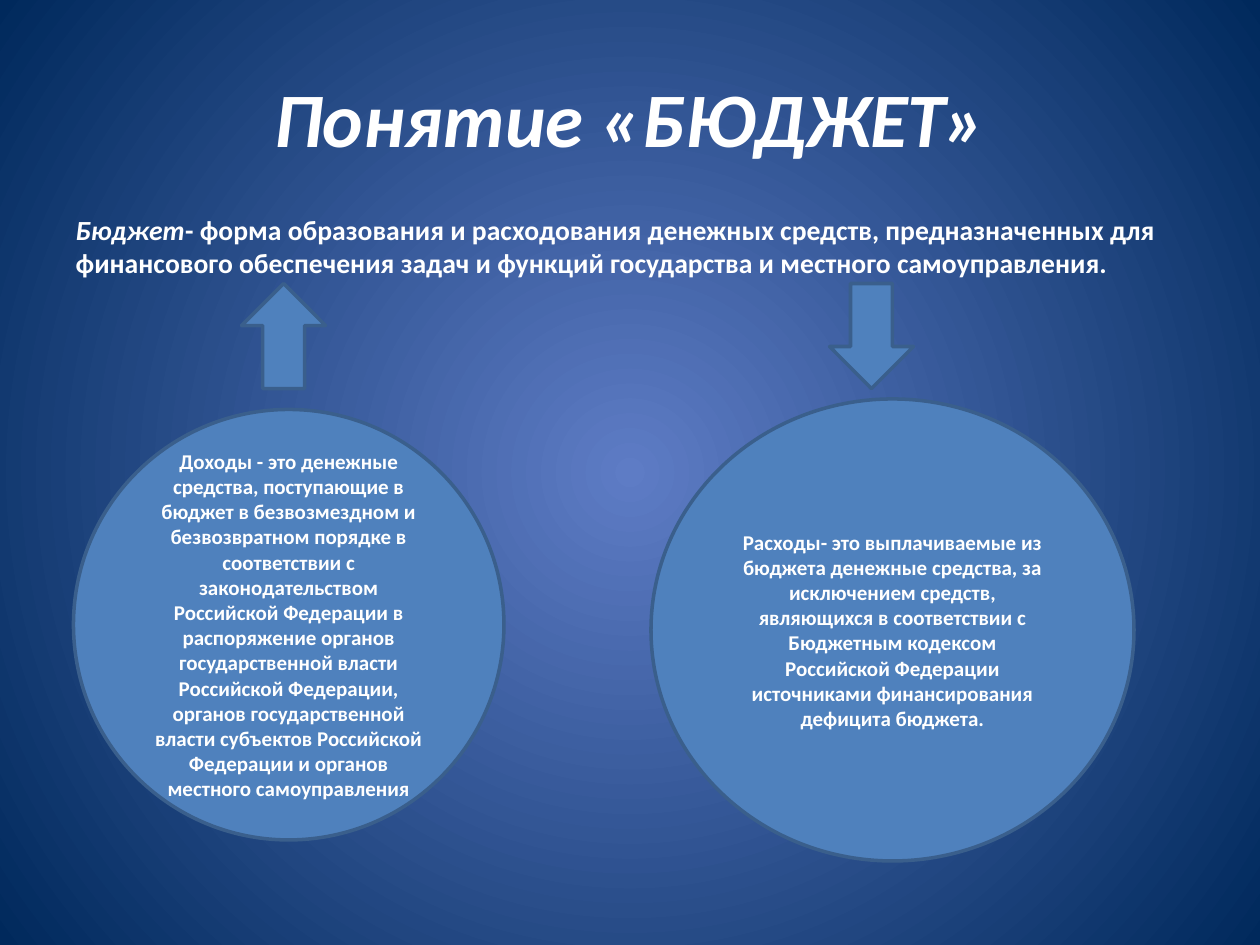
from lxml.etree import SubElement
from pptx import Presentation
from pptx.dml.color import RGBColor
from pptx.enum.shapes import MSO_SHAPE
from pptx.enum.text import MSO_ANCHOR, MSO_AUTO_SIZE, PP_ALIGN
from pptx.oxml.ns import qn
from pptx.util import Pt

WHITE, BLUE, EDGE = "FFFFFF", "4F81BD", "3A5F8C"
INCOME = (
    "Доходы - это денежные средства, поступающие в бюджет в безвозмездном и "
    "безвозвратном порядке в соответствии с законодательством Российской Федерации "
    "в распоряжение органов государственной власти Российской Федерации, органов "
    "государственной власти субъектов Российской Федерации и органов местного "
    "самоуправления"
)
EXPENSES = (
    "Расходы- это выплачиваемые из бюджета денежные средства, за исключением "
    "средств, являющихся в соответствии с Бюджетным кодексом Российской Федерации "
    "источниками финансирования дефицита бюджета."
)
DEFINITION = (
    "- форма образования и расходования денежных средств, предназначенных для "
    "финансового обеспечения задач и функций государства и местного самоуправления."
)


def color(value):
    """Turn a hex string into a colour."""
    return RGBColor.from_string(value)


def add_text(p, text, size, italic=False, align=PP_ALIGN.CENTER):
    """Append a bold white run to a paragraph."""
    p.alignment = align
    r = p.add_run()
    r.text = text
    r.font.name = "Calibri"
    r.font.size = Pt(size)
    r.font.bold = True
    r.font.italic = italic
    r.font.color.rgb = color(WHITE)


def place(sp, box):
    """Move a shape to a left, top, width, height box in points."""
    sp.left, sp.top, sp.width, sp.height = map(Pt, box)


def fill_background(s, inner, outer):
    """Fill the slide with a circular gradient from its centre."""
    fill = s.background.fill
    fill.gradient()
    for stop, value, position in zip(fill.gradient_stops, (inner, outer), (0, 1)):
        stop.color.rgb = color(value)
        stop.position = position
    grad = s.background._cSld.find(".//" + qn("a:gradFill"))
    grad.remove(grad.find(qn("a:lin")))
    circle = SubElement(grad, qn("a:path"), path="circle")
    SubElement(circle, qn("a:fillToRect"), dict.fromkeys("ltrb", "50000"))


def add_title(s, box):
    """Fill the title placeholder."""
    sp = s.shapes.title
    place(sp, box)
    tf = sp.text_frame
    tf.auto_size = MSO_AUTO_SIZE.NONE
    tf.vertical_anchor = MSO_ANCHOR.MIDDLE
    add_text(tf.paragraphs[0], "Понятие «БЮДЖЕТ»", 44, italic=True)


def add_definition(s, box):
    """Fill the body placeholder with the unbulleted definition."""
    sp = s.placeholders[1]
    place(sp, box)
    tf = sp.text_frame
    tf.auto_size = MSO_AUTO_SIZE.NONE
    tf.vertical_anchor = MSO_ANCHOR.BOTTOM
    tf.margin_bottom = Pt(12)
    p = tf.paragraphs[0]
    p.space_before = Pt(0)
    add_text(p, "Бюджет", 15.8, italic=True, align=PP_ALIGN.LEFT)
    add_text(p, DEFINITION, 15.8, align=PP_ALIGN.LEFT)
    pPr = p._p.get_or_add_pPr()
    pPr.set("marL", "0")
    pPr.set("indent", "0")
    SubElement(pPr, qn("a:buNone"))


def add_block(s, kind, box, text="", rotation=0):
    """Add an outlined blue shape with optional centred text."""
    sp = s.shapes.add_shape(kind, *map(Pt, box))
    sp.rotation = rotation
    sp.shadow.inherit = False
    sp.fill.solid()
    sp.fill.fore_color.rgb = color(BLUE)
    sp.line.color.rgb = color(EDGE)
    sp.line.width = Pt(2)
    if text:
        tf = sp.text_frame
        tf.word_wrap = True
        tf.vertical_anchor = MSO_ANCHOR.MIDDLE
        add_text(tf.paragraphs[0], text, 12)


def add_flow(s, circle, arrow_left, text, rotation=0):
    """Add a text circle and the arrow above it."""
    add_block(s, MSO_SHAPE.OVAL, circle, text)
    add_block(s, MSO_SHAPE.DOWN_ARROW, (arrow_left, 162, 48, 60), rotation=rotation)


def main():
    """Build and save the slide."""
    prs = Presentation()
    prs.slide_width, prs.slide_height = Pt(720), Pt(540)
    s = prs.slides.add_slide(prs.slide_layouts[1])
    fill_background(s, "5E7CC5", "00295C")
    add_title(s, (36, 21.6, 648, 90))
    add_definition(s, (36, 121, 648, 50.4))
    add_flow(s, (42, 234, 246, 246), 138, INCOME, rotation=180)
    add_flow(s, (372, 228, 276, 264), 474, EXPENSES)
    prs.save("out.pptx")


if __name__ == "__main__":
    main()
